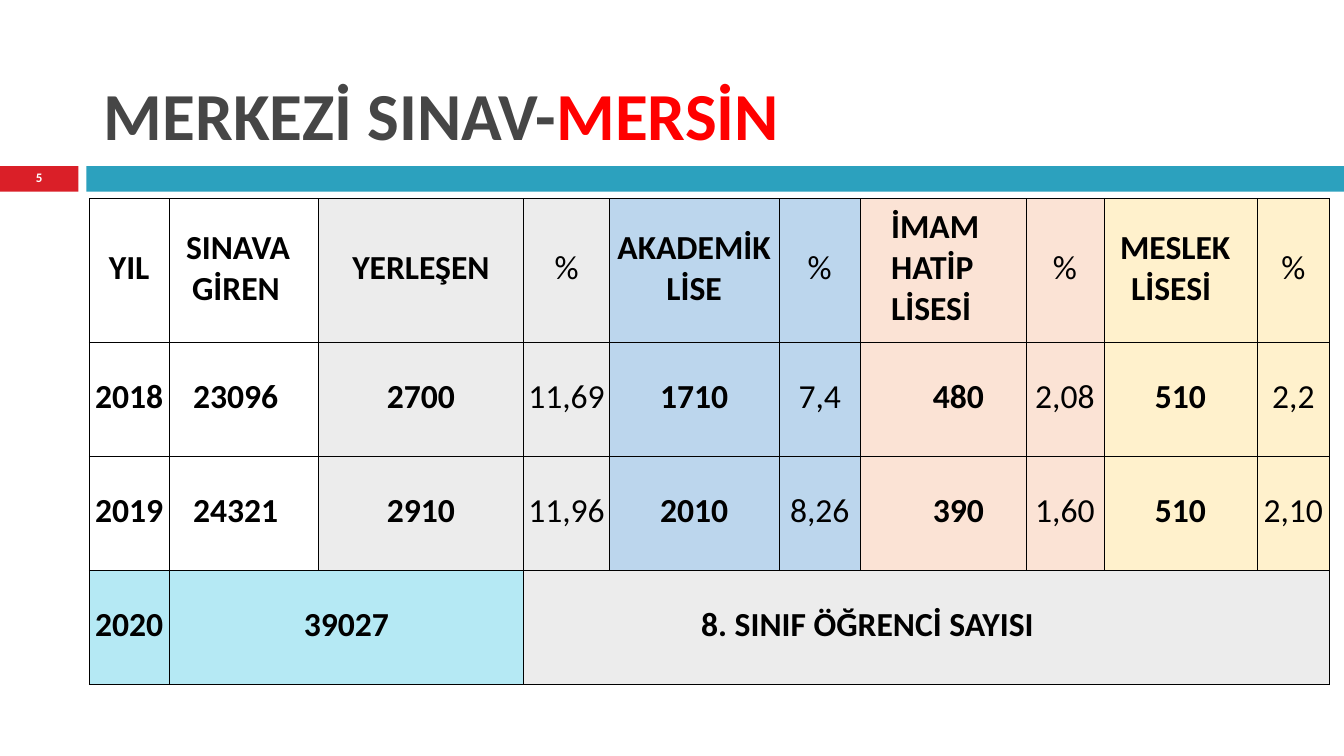
from lxml.etree import SubElement
from pptx import Presentation
from pptx.dml.color import RGBColor
from pptx.enum.shapes import MSO_SHAPE
from pptx.enum.text import MSO_ANCHOR, MSO_AUTO_SIZE, PP_ALIGN
from pptx.oxml.ns import qn
from pptx.util import Cm, Pt

BLACK = RGBColor(0x00, 0x00, 0x00)
WHITE = RGBColor(0xFF, 0xFF, 0xFF)
DARK = RGBColor(0x46, 0x46, 0x46)
BRIGHT_RED = RGBColor(0xFF, 0x00, 0x00)
RED = RGBColor(0xDA, 0x1F, 0x28)
TEAL = RGBColor(0x2C, 0xA1, 0xBE)
GREY = RGBColor(0xEC, 0xEC, 0xEC)
BLUE = RGBColor(0xBC, 0xD6, 0xED)
PEACH = RGBColor(0xFB, 0xE3, 0xD5)
CREAM = RGBColor(0xFF, 0xF1, 0xCC)
CYAN = RGBColor(0xB5, 0xE9, 0xF4)

COL_WIDTHS = [2.01, 3.76, 5.18, 2.16, 4.27, 2.06, 4.17, 1.96, 3.86, 1.83]
ROW_HEIGHTS = [3.63, 2.87, 2.87, 2.87]
COL_FILLS = [None, None, GREY, GREY, BLUE, BLUE, PEACH, PEACH, CREAM, CREAM]
TOTAL_FILLS = [CYAN] * 3 + [GREY] * 7
PERCENT_COLS = (3, 5, 7, 9)
ROWS = [
    ["YIL", "SINAVA\nGİREN", "YERLEŞEN", "%", "AKADEMİK\nLİSE", "%",
     "İMAM HATİP LİSESİ", "%", "MESLEK\nLİSESİ", "%"],
    ["2018", "23096", "2700", "11,69", "1710", "7,4", "480", "2,08", "510", "2,2"],
    ["2019", "24321", "2910", "11,96", "2010", "8,26", "390", "1,60", "510", "2,10"],
    ["2020", "39027", "", "8. SINIF ÖĞRENCİ SAYISI"] + [""] * 6,
]
INDENTS = {
    (0, 1): [0.43, 0.58], (0, 6): [0.77], (0, 8): [0.41, 0.69],
    (1, 1): [0.61], (2, 1): [0.61], (3, 3): [4.47],
}
RIGHT_MARGIN_COL, RIGHT_MARGIN = 6, 1.06


def set_attrs(obj, values):
    """Set each named attribute of an object."""
    for name, value in values.items():
        setattr(obj, name, value)


def add_run(p, text, size, color, bold=True):
    """Append a formatted run to a paragraph."""
    r = p.add_run()
    r.text = text
    set_attrs(r.font, {"name": "Calibri", "size": Pt(size), "bold": bold})
    r.font.color.rgb = color


def add_title(s, left, top, width, height):
    """Place the two-colour title in the given box."""
    sp = s.shapes.title
    set_attrs(sp, {"left": Cm(left), "top": Cm(top),
                   "width": Cm(width), "height": Cm(height)})
    tf = sp.text_frame
    set_attrs(tf, {"margin_left": Cm(0.08), "margin_right": 0, "margin_top": Cm(0.05),
                   "margin_bottom": 0, "word_wrap": True,
                   "auto_size": MSO_AUTO_SIZE.NONE, "vertical_anchor": MSO_ANCHOR.TOP})
    p = tf.paragraphs[0]
    p.alignment = PP_ALIGN.LEFT
    add_run(p, "MERKEZİ SINAV-", 48, DARK)
    add_run(p, "MERSİN", 48, BRIGHT_RED)


def add_band(s, left, top, width, height, number):
    """Draw the number tab and the bar beside it across the given box."""
    tab, gap = 1.98, 0.2
    parts = [(left, tab, RED), (left + tab + gap, width - tab - gap, TEAL)]
    for x, w, color in parts:
        sp = s.shapes.add_shape(MSO_SHAPE.RECTANGLE, Cm(x), Cm(top), Cm(w), Cm(height))
        sp.shadow.inherit = False
        sp.fill.solid()
        sp.fill.fore_color.rgb = color
        sp.line.fill.background()
        if color == RED:
            tf = sp.text_frame
            set_attrs(tf, {"margin_left": 0, "margin_right": 0, "margin_top": 0,
                           "margin_bottom": Cm(0.08),
                           "vertical_anchor": MSO_ANCHOR.MIDDLE})
            p = tf.paragraphs[0]
            p.alignment = PP_ALIGN.CENTER
            add_run(p, number, 9.3, WHITE)


def style_cell(cell, fill):
    """Give a cell thin black borders, zero margins and its fill."""
    tcPr = cell._tc.get_or_add_tcPr()
    for side in ("lnL", "lnR", "lnT", "lnB"):
        ln = SubElement(tcPr, qn(f"a:{side}"), w=str(Pt(0.5)))
        color = SubElement(SubElement(ln, qn("a:solidFill")), qn("a:srgbClr"))
        color.set("val", str(BLACK))
    if fill is None:
        cell.fill.background()
    else:
        cell.fill.solid()
        cell.fill.fore_color.rgb = fill
    set_attrs(cell, {"margin_left": 0, "margin_right": 0, "margin_top": 0,
                     "margin_bottom": Cm(0.1), "vertical_anchor": MSO_ANCHOR.MIDDLE})


def fill_cell(cell, row, col, text):
    """Write the lines of one cell with their alignment and indents."""
    indents = INDENTS.get((row, col))
    align = PP_ALIGN.LEFT if indents else PP_ALIGN.CENTER
    if col == RIGHT_MARGIN_COL:
        cell.margin_right = Cm(RIGHT_MARGIN)
        align = align if indents else PP_ALIGN.RIGHT
    tf = cell.text_frame
    for i, line in enumerate(text.split("\n")):
        p = tf.add_paragraph() if i else tf.paragraphs[0]
        p.alignment = align
        if indents:
            p._p.get_or_add_pPr().set("marL", str(Cm(indents[i])))
        add_run(p, line, 24, BLACK, row == 3 or col not in PERCENT_COLS)


def add_results_table(s, left, top):
    """Build the placement table from its top left corner."""
    frame = s.shapes.add_table(len(ROWS), len(COL_WIDTHS), Cm(left), Cm(top),
                               Cm(sum(COL_WIDTHS)), Cm(sum(ROW_HEIGHTS)))
    table = frame.table
    set_attrs(table, {"first_row": False, "horz_banding": False})
    for column, width in zip(table.columns, COL_WIDTHS):
        column.width = Cm(width)
    for table_row, height in zip(table.rows, ROW_HEIGHTS):
        table_row.height = Cm(height)
    for row, texts in enumerate(ROWS):
        fills = TOTAL_FILLS if row == 3 else COL_FILLS
        for col, text in enumerate(texts):
            cell = table.cell(row, col)
            style_cell(cell, fills[col])
            if text:
                fill_cell(cell, row, col, text)
    for first, last in ((1, 2), (3, 9)):
        table.cell(3, first).merge(table.cell(3, last))


def main():
    """Build and save the slide."""
    prs = Presentation()
    set_attrs(prs, {"slide_width": Cm(33.87), "slide_height": Cm(19.05)})
    s = prs.slides.add_slide(prs.slide_layouts[5])
    add_band(s, 0, 4.19, 33.87, 0.64, "5")
    add_title(s, 2.54, 1.8, 17.5, 2.11)
    add_results_table(s, 2.25, 5)
    prs.save("out.pptx")


if __name__ == "__main__":
    main()
